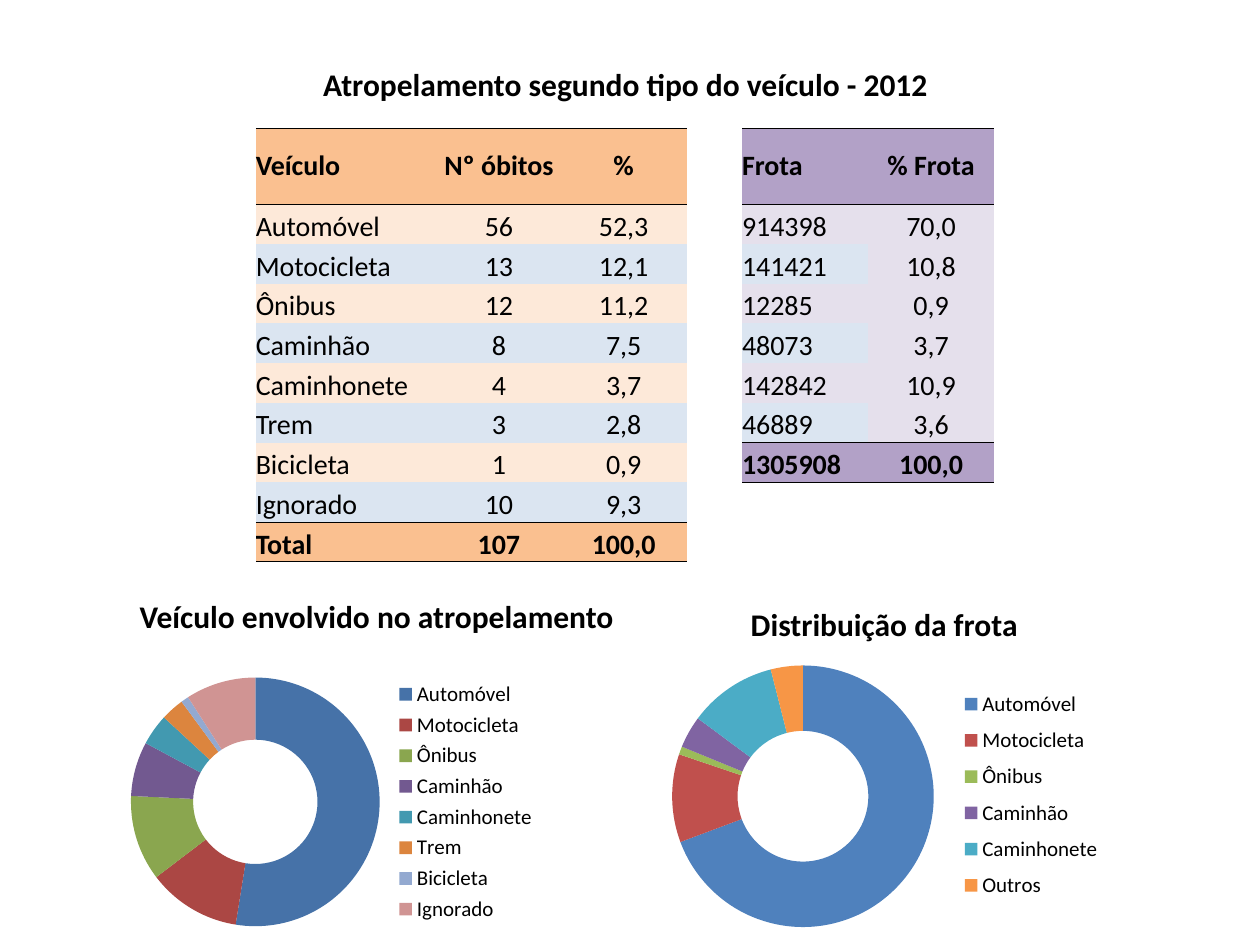
from dataclasses import dataclass

from lxml.etree import SubElement, fromstring
from pptx import Presentation
from pptx.chart.data import CategoryChartData
from pptx.dml.color import RGBColor
from pptx.enum.chart import XL_CHART_TYPE as ChartType, XL_LEGEND_POSITION as LegendPosition
from pptx.enum.text import MSO_ANCHOR as Anchor, PP_ALIGN as Align
from pptx.oxml.ns import nsdecls, qn
from pptx.util import Inches, Pt


@dataclass(frozen=True)
class Theme:
    """Fonts, type sizes and colours of the slide."""
    font: str = "Calibri"
    title: int = 18
    cell: int = 16
    chart: int = 10
    legend: int = 12
    ink: str = "000000"
    paper: str = "FFFFFF"
    rule: float = 0.5
    orange: str = "FAC090"
    orange_light: str = "FDE9D9"
    purple: str = "B2A1C7"
    purple_light: str = "E5E0EC"
    blue_light: str = "DBE5F1"
    death_slices: tuple = ("4672A8", "AB4744", "8AA64F", "725990",
                           "4299B0", "DC853E", "93A9D0", "D09493")
    fleet_slices: tuple = ("4F81BD", "C0504D", "9BBB59", "8064A2", "4BACC6", "F79646")


THEME = Theme()
NO_STYLE = "{2D5ABB26-0587-4C30-8999-92F81FD0307C}"
COLUMNS = (1.44, 0.98, 1, 0.44, 1, 1)
TABLE_HEIGHT = 3.44
HEADING_HEIGHT = 0.6
FLEET_COLUMN = 4
DEATHS = (
    ("Veículo", "Nº óbitos", "%"),
    ("Automóvel", "56", "52,3"),
    ("Motocicleta", "13", "12,1"),
    ("Ônibus", "12", "11,2"),
    ("Caminhão", "8", "7,5"),
    ("Caminhonete", "4", "3,7"),
    ("Trem", "3", "2,8"),
    ("Bicicleta", "1", "0,9"),
    ("Ignorado", "10", "9,3"),
    ("Total", "107", "100,0"),
)
FLEET = (
    ("Frota", "% Frota"),
    ("914398", "70,0"),
    ("141421", "10,8"),
    ("12285", "0,9"),
    ("48073", "3,7"),
    ("142842", "10,9"),
    ("46889", "3,6"),
    ("1305908", "100,0"),
)


def set_font(font, size, bold=False):
    """Apply the theme font at the given size."""
    font.name, font.size, font.bold = THEME.font, Pt(size), bold
    font.color.rgb = RGBColor.from_string(THEME.ink)


def set_fill(fill, colour):
    """Apply a solid fill."""
    fill.solid()
    fill.fore_color.rgb = RGBColor.from_string(colour)


def add_title(page, text, left, top, width, wrap=False, align=Align.LEFT):
    """Add a bold heading."""
    box = page.shapes.add_textbox(Inches(left), Inches(top), Inches(width), Inches(0.4))
    box.text_frame.word_wrap = wrap
    para = box.text_frame.paragraphs[0]
    para.text, para.alignment = text, align
    set_font(para.font, THEME.title, True)


def add_rules(cell, ruled):
    """Draw thin rules on the named edges of a cell and clear the others."""
    properties = cell._tc.get_or_add_tcPr()
    solid = f'<a:solidFill><a:srgbClr val="{THEME.ink}"/></a:solidFill>'
    for position, edge in enumerate(("lnL", "lnR", "lnT", "lnB")):
        paint = solid if edge in ruled else "<a:noFill/>"
        properties.insert(position, fromstring(
            f'<a:{edge} {nsdecls("a")} w="{Pt(THEME.rule)}">{paint}</a:{edge}>'))


def format_cell(cell, text="", align=Align.LEFT, anchor=Anchor.BOTTOM, bold=False):
    """Write a cell without padding and clear its fill."""
    cell.margin_left = cell.margin_right = cell.margin_top = cell.margin_bottom = 0
    cell.vertical_anchor = anchor
    para = cell.text_frame.paragraphs[0]
    para.text, para.alignment = text, align
    set_font(para.font, THEME.cell, bold)
    cell.fill.background()


def fill_block(table, rows, first_column, strong, light, striped_columns):
    """Write one block with its heading, striped body and total."""
    last = len(rows) - 1
    for row, texts in enumerate(rows):
        heavy = row in (0, last)
        for column, text in enumerate(texts):
            cell = table.cell(row, first_column + column)
            format_cell(cell, text, Align.CENTER if column else Align.LEFT,
                        Anchor.BOTTOM if row else Anchor.MIDDLE, heavy)
            striped = row % 2 == 0 and column < striped_columns
            set_fill(cell.fill, strong if heavy else THEME.blue_light if striped else light)
            add_rules(cell, [edge for edge, ruled_rows in
                             (("lnT", (0, 1, last)), ("lnB", (0, last - 1, last)))
                             if row in ruled_rows])


def add_vehicle_table(page):
    """Add the table of deaths and fleet by vehicle."""
    frame = page.shapes.add_table(len(DEATHS), len(COLUMNS), Inches(2.03), Inches(1.02),
                                  Inches(sum(COLUMNS)), Inches(TABLE_HEIGHT))
    table = frame.table
    table.first_row = table.horz_banding = False
    table._tbl.tblPr.find(qn("a:tableStyleId")).text = NO_STYLE
    for column, width in zip(table.columns, COLUMNS):
        column.width = Inches(width)
    body_height = (TABLE_HEIGHT - HEADING_HEIGHT) / (len(DEATHS) - 1)
    for index, row in enumerate(table.rows):
        row.height = Inches(body_height if index else HEADING_HEIGHT)
    for cell in table.iter_cells():
        format_cell(cell)
    fill_block(table, DEATHS, 0, THEME.orange, THEME.orange_light, 3)
    fill_block(table, FLEET, FLEET_COLUMN, THEME.purple, THEME.purple_light, 1)
    for row in range(len(FLEET), len(DEATHS)):
        for column in range(FLEET_COLUMN, len(COLUMNS)):
            set_fill(table.cell(row, column).fill, THEME.paper)


def set_layout(element, area, inner=False):
    """Place a chart part by fractions of the chart area."""
    layout = element.find(qn("c:layout"))
    if layout is None:
        layout = element.makeelement(qn("c:layout"))
        element.insert(1 if element.tag == qn("c:legend") else 0, layout)
    manual = SubElement(layout, qn("c:manualLayout"))
    settings = [("layoutTarget", "inner")] if inner else []
    settings += [("xMode", "edge"), ("yMode", "edge"), *zip("xywh", area)]
    for name, value in settings:
        SubElement(manual, qn(f"c:{name}")).set("val", str(value))


def whole_shares(rows, column):
    """Give each body row's count as a whole percentage of the total row."""
    *counts, total = [int(row[column]) for row in rows[1:]]
    return [round(100 * count / total) for count in counts]


def add_doughnut(page, place, names, shares, colours, plot_area, legend_area):
    """Add a doughnut chart with a legend on the right."""
    data = CategoryChartData()
    data.categories = names
    data.add_series("Series 1", shares)
    chart = page.shapes.add_chart(ChartType.DOUGHNUT, *map(Inches, place), data).chart
    chart.has_title = False
    set_font(chart.font, THEME.chart)
    chart.has_legend = True
    chart.legend.position = LegendPosition.RIGHT
    chart.legend.include_in_layout = False
    set_font(chart.legend.font, THEME.legend)
    plot = chart.plots[0]
    plot.vary_by_categories = True
    for index, colour in enumerate(colours):
        set_fill(plot.series[0].points[index].format.fill, colour)
    set_layout(chart._chartSpace.chart.plotArea, plot_area, inner=True)
    set_layout(chart.legend._element, legend_area)


def main():
    """Build the slide and save it."""
    deck = Presentation()
    deck.slide_width, deck.slide_height = Inches(10), Inches(7.5)
    page = deck.slides.add_slide(deck.slide_layouts[6])
    vehicles = [row[0] for row in DEATHS[1:-1]]
    add_doughnut(page, (0.86, 5.23, 3.59, 2.27), vehicles, whole_shares(DEATHS, 1),
                 THEME.death_slices, (0.05, 0.06, 0.55, 0.88), (0.63, 0.06, 0.32, 0.88))
    add_title(page, "Atropelamento segundo tipo do veículo - 2012", 2.27, 0.47, 5.39,
              True, Align.CENTER)
    add_title(page, "Veículo envolvido no atropelamento", 1.01, 4.69, 3.99)
    add_title(page, "Distribuição da frota", 5.86, 4.75, 2.34)
    add_doughnut(page, (5, 5.14, 3.98, 2.36), vehicles[:5] + ["Outros"],
                 whole_shares(FLEET, 0), THEME.fleet_slices,
                 (0.08, 0.06, 0.53, 0.88), (0.65, 0.11, 0.3, 0.77))
    add_vehicle_table(page)
    deck.save("out.pptx")


if __name__ == "__main__":
    main()
